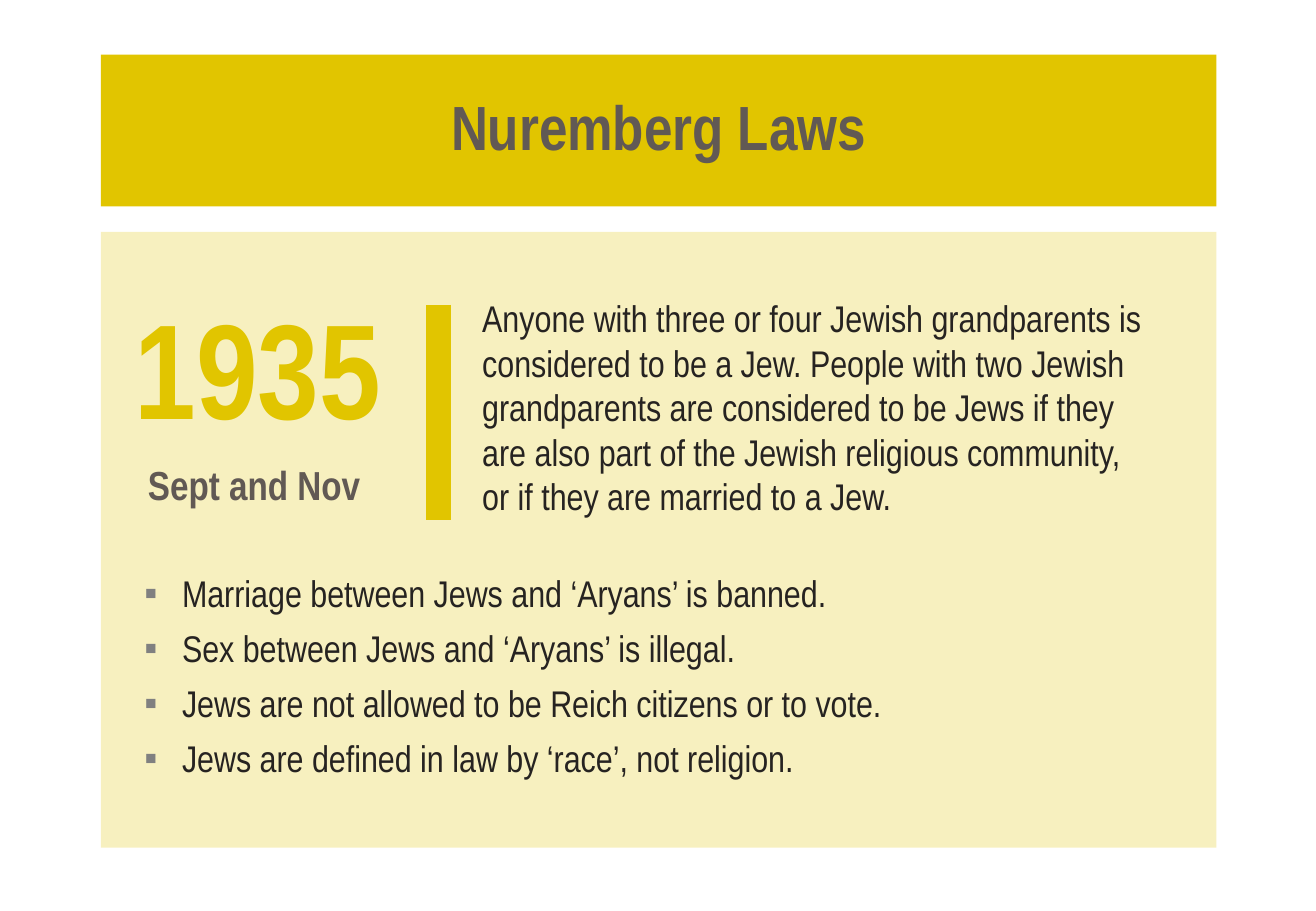
import pptx
import pptx.util
import pptx.dml.color
import pptx.enum.shapes
import pptx.enum.text
import pptx.oxml
import pptx.oxml.ns
from pptx.util import Inches

GOLD, GREY, INK = "E1C500", "615954", "262321"


def rgb(value):
    return pptx.dml.color.RGBColor.from_string(value)


def write(sp, paragraphs):
    tf = sp.text_frame
    tf.word_wrap = True
    tf.auto_size = pptx.enum.text.MSO_AUTO_SIZE.NONE
    tf.vertical_anchor = pptx.enum.text.MSO_ANCHOR.MIDDLE
    for i, (text, size, color, bold, layout) in enumerate(paragraphs):
        p = tf.paragraphs[0] if i == 0 else tf.add_paragraph()
        for name, value in layout.items():
            setattr(p, name, value)
        r = p.add_run()
        r.text = text
        font = {"name": "Arial Narrow", "size": pptx.util.Pt(size), "bold": bold}
        for name, value in font.items():
            setattr(r.font, name, value)
        r.font.color.rgb = rgb(color)


prs = pptx.Presentation()
prs.slide_width, prs.slide_height = Inches(10.83), Inches(7.5)
s = prs.slides.add_slide(prs.slide_layouts[5])

title = s.shapes.title
title.left, title.top = Inches(0.83), Inches(0.45)
title.width, title.height = Inches(9.18), Inches(1.25)
title.fill.solid()
title.fill.fore_color.rgb = rgb(GOLD)
centred = {"alignment": pptx.enum.text.PP_ALIGN.CENTER, "line_spacing": 0.9}
write(title, [("Nuremberg Laws", 37, GREY, True, centred)])

panel = s.shapes.add_shape(
    pptx.enum.shapes.MSO_SHAPE.RECTANGLE,
    Inches(0.83), Inches(1.91), Inches(9.18), Inches(5.07))
panel.shadow.inherit = False
panel.line.fill.background()
panel.fill.solid()
panel.fill.fore_color.rgb = rgb(GOLD)
color = panel.fill._xPr.find(".//" + pptx.oxml.ns.qn("a:srgbClr"))
color.append(pptx.oxml.parse_xml(
    f'<a:alpha {pptx.oxml.ns.nsdecls("a")} val="25000"/>'))

date = s.shapes.add_textbox(Inches(1.01), Inches(2.4), Inches(2.44), Inches(1.88))
write(date, [
    ("1935", 80, GOLD, True, {"line_spacing": 0.9}),
    ("Sept and Nov", 24, GREY, True,
     {"line_spacing": 0.9, "space_before": pptx.util.Pt(10)}),
])
date.text_frame.paragraphs[1]._p.get_or_add_pPr().set("marL", str(Inches(0.11)))

divider = s.shapes.add_connector(
    pptx.enum.shapes.MSO_CONNECTOR.STRAIGHT,
    Inches(3.61), Inches(2.51), Inches(3.61), Inches(4.28))
divider.line.color.rgb = rgb(GOLD)
divider.line.width = pptx.util.Pt(15)
divider._element.spPr.append(pptx.oxml.parse_xml(
    f'<a:effectLst {pptx.oxml.ns.nsdecls("a")}/>'))

definition = s.shapes.add_textbox(
    Inches(3.87), Inches(2.41), Inches(5.72), Inches(1.88))
write(definition, [(
    "Anyone with three or four Jewish grandparents is considered to be a Jew. "
    "People with two Jewish grandparents are considered to be Jews if they are "
    "also part of the Jewish religious community, or if they are married to a Jew.",
    22, INK, False, {})])

laws = [
    "Marriage between Jews and ‘Aryans’ is banned.",
    "Sex between Jews and ‘Aryans’ is illegal.",
    "Jews are not allowed to be Reich citizens or to vote.",
    "Jews are defined in law by ‘race’, not religion.",
]
rules = s.shapes.add_textbox(Inches(1.09), Inches(4.62), Inches(8.9), Inches(1.88))
spaced = {"level": 1, "space_after": pptx.util.Pt(6.3)}
write(rules, [(law, 22, INK, False, spaced) for law in laws])
for p in rules.text_frame.paragraphs:
    pPr = p._p.get_or_add_pPr()
    pPr.set("marL", str(Inches(0.31)))
    pPr.set("indent", str(Inches(-0.31)))
    for xml in ('<a:buClr {}><a:srgbClr val="808080"/></a:buClr>',
                '<a:buFont {} typeface="Arial"/>',
                '<a:buChar {} char="▪"/>'):
        pPr.append(pptx.oxml.parse_xml(xml.format(pptx.oxml.ns.nsdecls("a"))))

prs.save("out.pptx")
